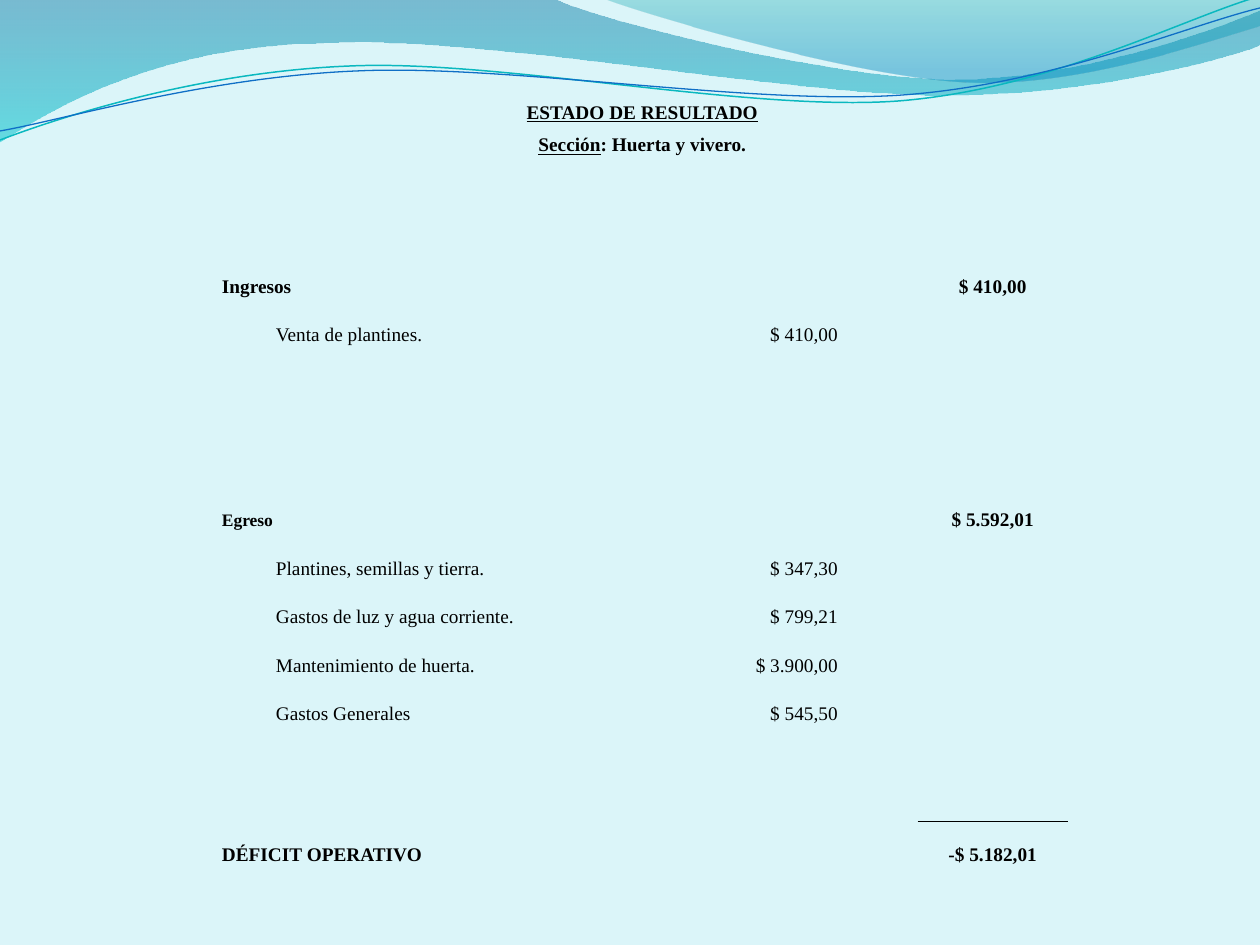
import dataclasses
import itertools

import lxml.etree
import pptx
import pptx.dml.color
import pptx.enum.text
import pptx.oxml.ns
import pptx.util

PX = 914400 / 126
ALIGN = pptx.enum.text.PP_ALIGN
COLUMNS = [54, 16, 16, 300, 28, 62, 150, 75, 150]
LABEL_COL, AMOUNT_COL, TOTAL_COL = 1, 6, 8


@dataclasses.dataclass(frozen=True)
class Theme:
    """Colours, font and type sizes of the slide."""
    background: str = "DBF5F9"
    ink: str = "000000"
    teal_line: str = "0AB8BF"
    blue_line: str = "0F6FC6"
    band: tuple = ((0, "0074A1", 45), (1, "00C6CF", 55))
    crest: tuple = ((0, "00A1A9", 30), (0.8, "008BBF", 45))
    font: str = "Times New Roman"
    body: int = 11
    small: int = 10


THEME = Theme()


@dataclasses.dataclass
class Row:
    """One statement row: height, merged (column, width) spans and texts by column."""
    height: int
    spans: tuple = ()
    texts: dict = dataclasses.field(default_factory=dict)
    bold: bool = False
    label_size: int = THEME.body
    space_before: int = 0


def px(length):
    """Turn pixels into EMU."""
    return pptx.util.Emu(round(length * PX))


def rgb(code):
    """Turn a hex code into a colour."""
    return pptx.dml.color.RGBColor.from_string(code)


def add_sub(parent, tag, **attributes):
    """Append a DrawingML element."""
    return lxml.etree.SubElement(parent, pptx.oxml.ns.qn(tag), attributes)


def add_outline(slide, start, segments, closed):
    """Draw an outline from straight (1 point) and cubic (3 point) segments."""
    builder = slide.shapes.build_freeform(*start, scale=PX)
    builder.add_line_segments(list(itertools.chain(*segments)), close=closed)
    outline = builder.convert_to_shape()
    outline.shadow.inherit = False
    steps = iter(list(outline._element.iter(pptx.oxml.ns.qn("a:lnTo"))))
    for segment in segments:
        corners = list(itertools.islice(steps, len(segment)))
        if len(corners) == 3:
            curve = lxml.etree.Element(pptx.oxml.ns.qn("a:cubicBezTo"))
            corners[0].addprevious(curve)
            for corner in corners:
                curve.append(corner[0])
                corner.getparent().remove(corner)
    return outline


def add_wave(slide, start, segments, stops):
    """Draw a wave filled with a translucent top-to-bottom gradient."""
    wave = add_outline(slide, start, segments, True)
    wave.line.fill.background()
    wave.fill.gradient()
    wave.fill.gradient_angle = 270
    for stop, (position, colour, _) in zip(wave.fill.gradient_stops, stops):
        stop.position = position
        stop.color.rgb = rgb(colour)
    for element, (_, _, alpha) in zip(wave._element.iter(pptx.oxml.ns.qn("a:srgbClr")), stops):
        add_sub(element, "a:alpha", val=str(alpha * 1000))


def add_ripple(slide, start, segments, colour, width):
    """Draw a thin curved line."""
    ripple = add_outline(slide, start, segments, False)
    ripple.fill.background()
    ripple.line.color.rgb = rgb(colour)
    ripple.line.width = pptx.util.Pt(width)


def add_paragraph(paragraph, runs, align, size, space_before=0):
    """Write (text, bold, underline) runs into a paragraph."""
    paragraph.alignment = align
    paragraph.line_spacing = 1.5
    if space_before:
        paragraph.space_before = pptx.util.Pt(space_before)
    for text, bold, underline in runs:
        run = paragraph.add_run()
        run.text = text
        run.font.name = THEME.font
        run.font.size = pptx.util.Pt(size)
        run.font.bold = bold
        run.font.underline = underline
        run.font.color.rgb = rgb(THEME.ink)


def add_border(cell, side):
    """Rule one side of a cell."""
    properties = cell._tc.get_or_add_tcPr()
    border = add_sub(properties, side, w=str(pptx.util.Pt(1)))
    add_sub(add_sub(border, "a:solidFill"), "a:srgbClr", val=THEME.ink)
    properties.insert(0, border)


def add_statement(slide, left, top, heading, rows):
    """Build the income statement table."""
    frame = slide.shapes.add_table(len(rows), len(COLUMNS), px(left), px(top),
                                   px(sum(COLUMNS)), px(sum(row.height for row in rows)))
    table = frame.table
    table.first_row = table.horz_banding = False
    style = next(frame._element.iter(pptx.oxml.ns.qn("a:tableStyleId")))
    style.text = "{2D5ABB26-0587-4C30-8999-92F81FD0307C}"
    for column, width in zip(table.columns, COLUMNS):
        column.width = px(width)
    for cell in table.iter_cells():
        cell.fill.background()
        cell.margin_left = cell.margin_right = px(5)
        cell.margin_top = cell.margin_bottom = 0
        cell.vertical_anchor = pptx.enum.text.MSO_ANCHOR.BOTTOM
    aligns = {AMOUNT_COL: ALIGN.RIGHT, TOTAL_COL: ALIGN.CENTER}
    for index, row in enumerate(rows):
        table.rows[index].height = px(row.height)
        for column, width in row.spans:
            table.cell(index, column).merge(table.cell(index, column + width - 1))
        for column, text in row.texts.items():
            size = row.label_size if column == 0 else THEME.body
            add_paragraph(table.cell(index, column).text_frame.paragraphs[0],
                          [(text, row.bold, False)], aligns.get(column, ALIGN.LEFT),
                          size, row.space_before)
    title = table.cell(0, 0).text_frame
    for number, runs in enumerate(heading):
        paragraph = title.add_paragraph() if number else title.paragraphs[0]
        add_paragraph(paragraph, runs, ALIGN.CENTER, THEME.body)
    add_border(table.cell(len(rows) - 2, TOTAL_COL), "a:lnB")
    add_border(table.cell(len(rows) - 1, TOTAL_COL), "a:lnT")


def item(height, label, amount, width):
    """Describe a detail row with its label and amount."""
    return Row(height, ((LABEL_COL, width),), {LABEL_COL: label, AMOUNT_COL: amount})


def main():
    """Build and save the slide."""
    deck = pptx.Presentation()
    deck.slide_width, deck.slide_height = px(1260), px(945)
    slide = deck.slides.add_slide(deck.slide_layouts[6])
    slide.background.fill.solid()
    slide.background.fill.fore_color.rgb = rgb(THEME.background)

    add_wave(slide, (0, 0), [
        [(554, -1)], [(600, 21), (837, 79), (955, 79)], [(1075, 79), (1207, 33), (1260, 11)],
        [(1261, 45)], [(1239, 55), (1096, 96), (940, 95)], [(784, 95), (481, 35), (324, 43)],
        [(163, 45), (58, 105), (-1, 142)]], THEME.band)
    add_wave(slide, (604, -1), [
        [(641, 14), (859, 78), (969, 82)], [(1079, 87), (1211, 40), (1260, 26)],
        [(1260, 0)]], THEME.crest)
    add_ripple(slide, (0, 140), [
        [(60, 117), (199, 72), (349, 66)], [(498, 59), (747, 112), (898, 101)],
        [(1050, 89), (1182, 19), (1257, -3)]], THEME.teal_line, 0.85)
    add_ripple(slide, (0, 131), [
        [(59, 121), (207, 77), (357, 71)], [(508, 64), (752, 106), (903, 95)],
        [(1053, 84), (1186, 26), (1260, 8)]], THEME.blue_line, 0.75)

    heading = [[("ESTADO DE RESULTADO", True, True)],
               [("Sección", True, True), (": Huerta y vivero.", True, False)]]
    paired = ((0, 3), (4, 2))
    wide = ((0, 4),)
    inner = ((LABEL_COL, 3),)
    add_statement(slide, 217, 59, heading, [
        Row(97, ((0, 9),)),
        Row(49, paired),
        Row(45, paired),
        Row(48, ((0, 4), (4, 2)), {0: "Ingresos", TOTAL_COL: "$ 410,00"}, bold=True),
        item(48, "Venta de plantines.", "$ 410,00", 4),
        Row(49, inner),
        Row(48, inner),
        Row(88, ((0, 2), (2, 2)), {0: "Egreso", TOTAL_COL: "$ 5.592,01"}, True, THEME.small),
        item(49, "Plantines, semillas y tierra.", "$ 347,30", 4),
        item(48, "Gastos de luz y agua corriente.", "$ 799,21", 4),
        item(49, "Mantenimiento de huerta.", "$ 3.900,00", 3),
        item(48, "Gastos Generales", "$ 545,50", 3),
        Row(49, wide),
        Row(48, wide),
        Row(44, wide, {0: "DÉFICIT OPERATIVO", TOTAL_COL: "-$ 5.182,01"}, True, space_before=6),
    ])
    deck.save("out.pptx")


if __name__ == "__main__":
    main()
